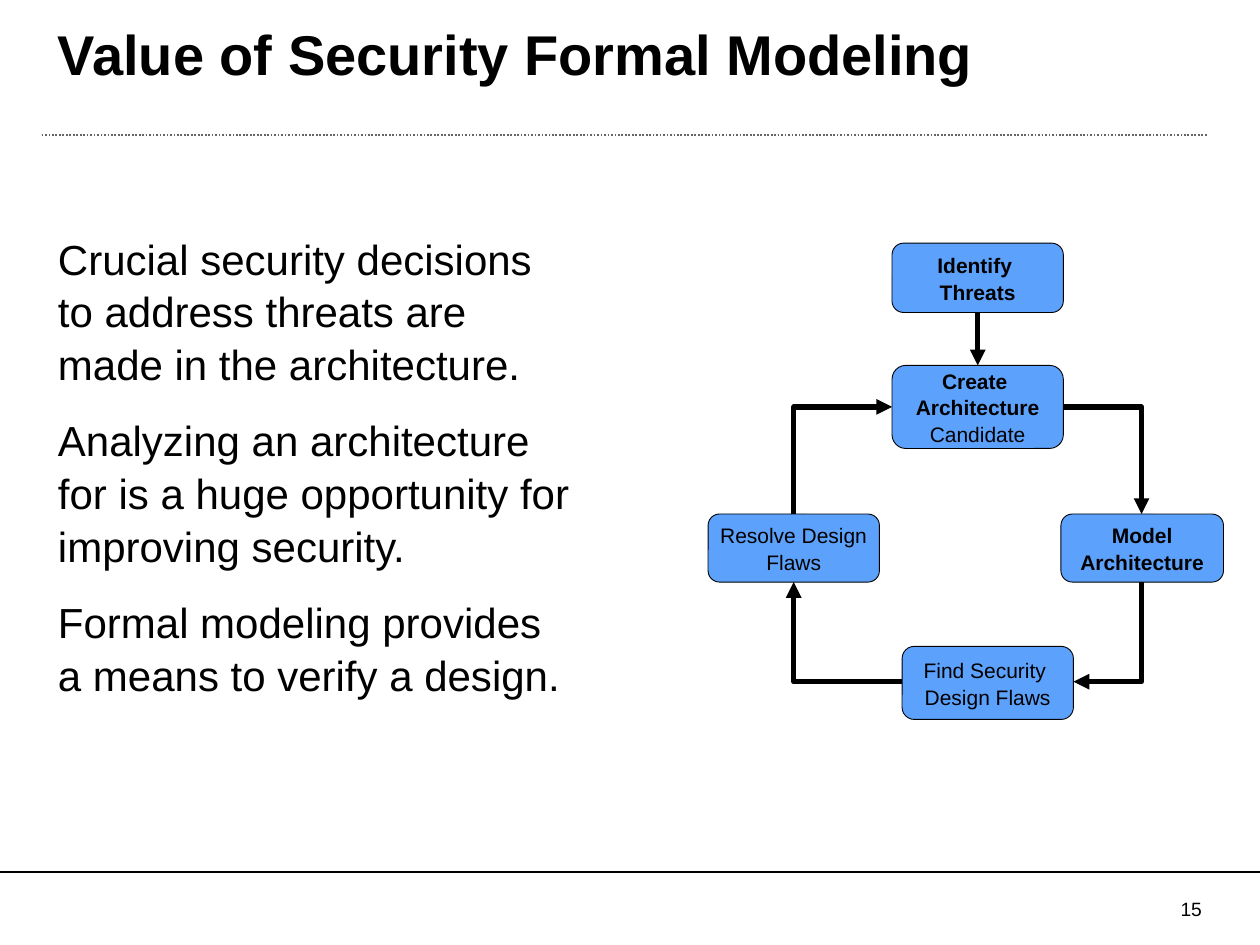
"""Build the slide on the value of security formal modeling."""
import pptx
import pptx.util
import pptx.dml.color
import pptx.enum.dml
import pptx.enum.shapes
import pptx.enum.text
import pptx.oxml.ns
import pptx.oxml.xmlchemy

HUES = {"ink": "000000", "rule": "666666", "box": "5CA1FB"}
CELL = pptx.util.Inches(0.1)
ALIGN = pptx.enum.text.PP_ALIGN
ANCHOR = pptx.enum.text.MSO_ANCHOR
KIND = pptx.enum.shapes.MSO_CONNECTOR
tag = pptx.oxml.ns.qn
make = pptx.oxml.xmlchemy.OxmlElement
rgb = pptx.dml.color.RGBColor.from_string


def write(shape, paras, size=12, bold=0, align=ALIGN.LEFT, anchor=ANCHOR.TOP,
          wrap=True, lead=None, before=0, after=0):
    """Fill a shape with paragraphs; bold counts the leading bold lines."""
    frame = shape.text_frame
    frame.word_wrap, frame.vertical_anchor = wrap, anchor
    frame.auto_size = pptx.enum.text.MSO_AUTO_SIZE.NONE
    frame.margin_left = frame.margin_right = 0
    frame.margin_top = frame.margin_bottom = 0
    for row, text in enumerate(paras):
        para = frame.add_paragraph() if row else frame.paragraphs[0]
        para.text = text
        props = para._p.get_or_add_pPr()
        props.set("marL", "0")
        props.set("indent", "0")
        props.append(make("a:buNone"))
        para.alignment, para.line_spacing = align, lead
        para.space_before = pptx.util.Pt(before if row else 0)
        para.space_after = pptx.util.Pt(after)
        for num, run in enumerate(para.runs):
            font = run.font
            font.name, font.size = "Arial", pptx.util.Pt(size)
            font.bold = num < bold
            font.color.rgb = rgb(HUES["ink"])
        for gap in para._p.findall(tag("a:br")):
            mark = make("a:rPr")
            mark.set("sz", str(size * 100))
            gap.append(mark)


def draw(start, end, kind=KIND.STRAIGHT, hue="ink", width=1, head=False):
    """Add a line between two grid points."""
    line = slide.shapes.add_connector(
        kind, *[round(n * CELL) for n in (*start, *end)])
    line.line.color.rgb = rgb(HUES[hue])
    line.line.width = pptx.util.Pt(width)
    if head:
        tip = make("a:tailEnd")
        tip.set("type", "triangle")
        line.line._get_or_add_ln().append(tip)
    line._element.spPr.append(make("a:effectLst"))
    return line


deck = pptx.Presentation()
deck.slide_width, deck.slide_height = 100 * CELL, 75 * CELL
slide = deck.slides.add_slide(deck.slide_layouts[1])

rule = draw((3.3, 10.7), (95.8, 10.7), hue="rule")
rule.line.dash_style = pptx.enum.dml.MSO_LINE.ROUND_DOT
draw((0, 69.2), (100, 69.2))

title, body = slide.placeholders
page = slide.shapes.add_textbox(0, 0, CELL, CELL)
for shape, spot in ((title, (4.6, 2.6, 85.5, 4.3)),
                    (body, (4.6, 18.3, 40.6, 48.4)),
                    (page, (90.7, 71.2, 4.7, 1.9))):
    shape.left, shape.top, shape.width, shape.height = [
        round(n * CELL) for n in spot]

write(title, ["Value of Security Formal Modeling"], size=32, bold=1, lead=0.8)
write(body, [
    "Crucial security decisions to address threats are made in the architecture.",
    "Analyzing an architecture for is a huge opportunity for improving security.",
    "Formal modeling provides a means to verify a design.",
], size=24, lead=1.05, before=6, after=7.2)
write(page, ["15"], size=11, align=ALIGN.RIGHT, anchor=ANCHOR.MIDDLE,
      lead=pptx.util.Pt(13))

STEPS = [
    ("Identify \vThreats", 2, 70.8, 19.3, 13.6, 5.5),
    ("Create \vArchitecture\vCandidate", 2, 70.8, 29, 13.6, 6.6),
    ("Model\vArchitecture", 2, 84.2, 40.8, 12.9, 5.4),
    ("Find Security \vDesign Flaws", 0, 71.6, 51.3, 13.6, 5.8),
    ("Resolve Design\vFlaws", 0, 56.2, 40.8, 13.6, 5.4),
]
for text, bold, *spot in STEPS:
    box = slide.shapes.add_shape(
        pptx.enum.shapes.MSO_SHAPE.ROUNDED_RECTANGLE,
        *[round(n * CELL) for n in spot])
    box.shadow.inherit = False
    box.fill.solid()
    box.fill.fore_color.rgb = rgb(HUES["box"])
    box.line.color.rgb = rgb(HUES["ink"])
    box.line.width = pptx.util.Pt(0.5)
    write(box, [text], bold=bold, align=ALIGN.CENTER, anchor=ANCHOR.MIDDLE,
          wrap=False, lead=1.05)

draw((77.6, 24.8), (77.6, 29), width=3, head=True)
BENDS = [
    ((84.4, 32.3), (90.6, 40.8), False),
    ((90.6, 46.2), (85.2, 54.1), True),
    ((71.6, 54.1), (63, 46.2), False),
    ((63, 40.8), (70.8, 32.3), True),
]
for start, end, turn in BENDS:
    if turn:
        mid = [(a + b) / 2 for a, b in zip(start, end)]
        wide, tall = [(b - a) / 2 for a, b in zip(start, end)]
        start = mid[0] - tall, mid[1] + wide
        end = mid[0] + tall, mid[1] - wide
    bend = draw(start, end, kind=KIND.ELBOW, width=3, head=True)
    props = bend._element.spPr
    props.find(tag("a:prstGeom")).set("prst", "bentConnector2")
    if turn:
        props.find(tag("a:xfrm")).set("rot", str(90 * 60000))

deck.save("out.pptx")
